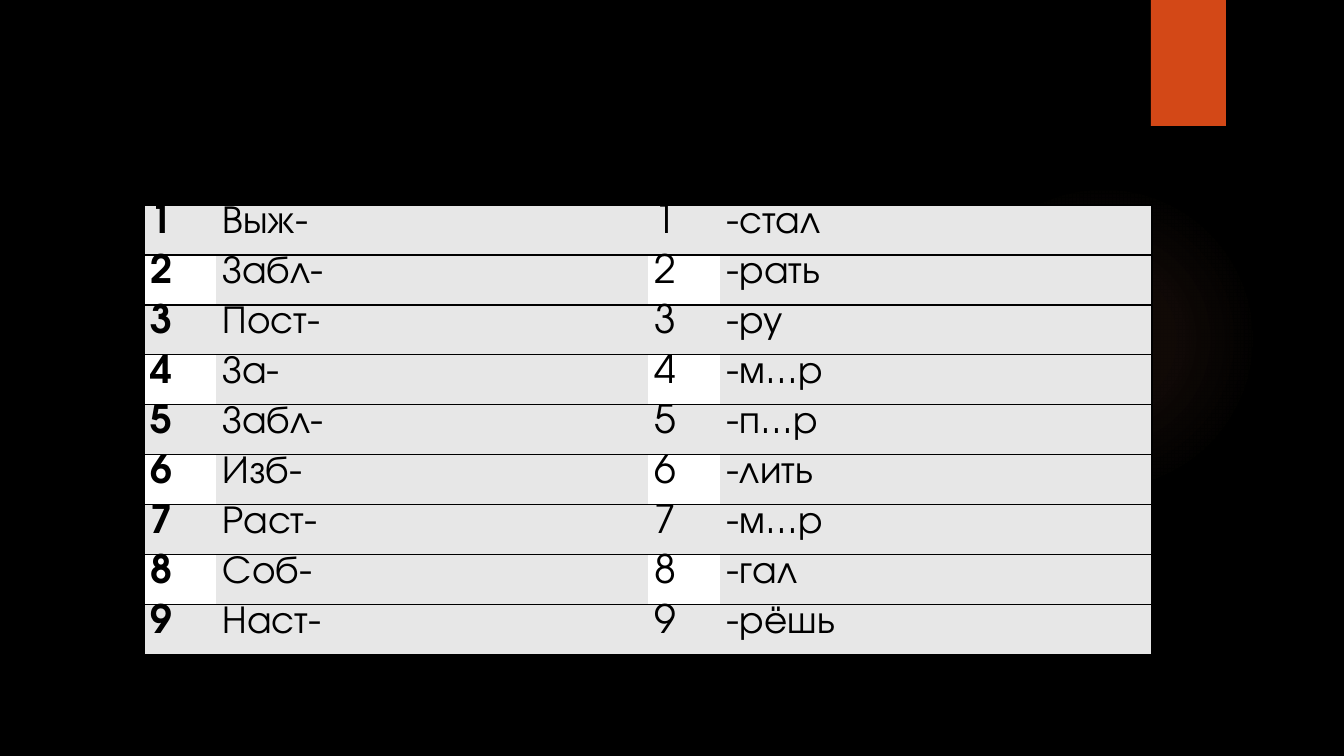
from dataclasses import dataclass

from pptx import Presentation
from pptx.dml.color import RGBColor
from pptx.enum.shapes import MSO_SHAPE as Preset
from pptx.oxml import parse_xml
from pptx.oxml.ns import nsdecls
from pptx.slide import Slide
from pptx.table import Table, _Cell as Cell
from pptx.util import Emu, Pt

EMU_PER_PX = 914400 / 100.8
FONT = "TeX Gyre Adventor"
BLACK, WHITE, GREY = "000000", "FFFFFF", "E7E7E7"
ORANGE, GLOW = "D34817", "EF8C6A"
GLOW_STOPS = ((0, 7), (36, 6), (69, 0))
COLUMN_WIDTHS = (72, 432, 72, 432)
ROW_HEIGHT = 50
CELL_MARGIN = 7


@dataclass(frozen=True)
class WordPair:
    """The two halves on one row of the table."""
    beginning: str
    ending: str


WORD_PAIRS = (
    WordPair("Выж-", "-стал"),
    WordPair("Забл-", "-рать"),
    WordPair("Пост-", "-ру"),
    WordPair("За-", "-м...р"),
    WordPair("Забл-", "-п...р"),
    WordPair("Изб-", "-лить"),
    WordPair("Раст-", "-м...р"),
    WordPair("Соб-", "-гал"),
    WordPair("Наст-", "-рёшь"),
)


def px(length: int) -> Emu:
    """Turn pixels into EMU."""
    return Emu(round(length * EMU_PER_PX))


def color(value: str) -> RGBColor:
    """Turn a hex string into a colour."""
    return RGBColor.from_string(value)


def add_glow(slide: Slide) -> None:
    """Draw the faint round glow behind the table."""
    shape = slide.shapes.add_shape(Preset.OVAL, px(949), px(184), px(310), px(310))
    stops = "".join(
        f'<a:gs pos="{position * 1000}"><a:srgbClr val="{GLOW}">'
        f'<a:alpha val="{alpha * 1000}"/></a:srgbClr></a:gs>'
        for position, alpha in GLOW_STOPS
    )
    shape._element.spPr.append(parse_xml(
        f'<a:gradFill {nsdecls("a")}><a:gsLst>{stops}</a:gsLst><a:path path="circle">'
        '<a:fillToRect l="50000" t="50000" r="50000" b="50000"/></a:path></a:gradFill>'
    ))
    shape.line.fill.background()
    shape.shadow.inherit = False


def add_tab(slide: Slide) -> None:
    """Draw the orange tab at the top edge."""
    shape = slide.shapes.add_shape(Preset.RECTANGLE, px(1151), px(0), px(75), px(126))
    shape.fill.solid()
    shape.fill.fore_color.rgb = color(ORANGE)
    shape.line.fill.background()
    shape.shadow.inherit = False


def set_borders(cell: Cell, sides: str) -> None:
    """Give the named sides a thin black line and the others none."""
    properties = cell._tc.get_or_add_tcPr()
    for side in "LRTB":
        paint = (f'<a:solidFill><a:srgbClr val="{BLACK}"/></a:solidFill>'
                 if side in sides else "<a:noFill/>")
        properties.append(parse_xml(
            f'<a:ln{side} {nsdecls("a")} w="{Pt(1)}">{paint}</a:ln{side}>'))


def fill_cell(cell: Cell, text: str, fill: str, bold: bool, sides: str) -> None:
    """Write and style one table cell."""
    cell.margin_left = cell.margin_right = px(CELL_MARGIN)
    cell.margin_top = cell.margin_bottom = 0
    set_borders(cell, sides)
    cell.fill.solid()
    cell.fill.fore_color.rgb = color(fill)
    run = cell.text_frame.paragraphs[0].add_run()
    run.text = text
    run.font.name = FONT
    run.font.size = Pt(28)
    run.font.bold = bold
    run.font.color.rgb = color(BLACK)


def add_word_table(slide: Slide) -> Table:
    """Draw the numbered table of word halves."""
    table = slide.shapes.add_table(
        len(WORD_PAIRS), len(COLUMN_WIDTHS), px(144), px(205),
        px(sum(COLUMN_WIDTHS)), px(ROW_HEIGHT * len(WORD_PAIRS))).table
    table.first_row = table.horz_banding = False
    for column, width in zip(table.columns, COLUMN_WIDTHS):
        column.width = px(width)
    outer_sides = {0: "L", len(COLUMN_WIDTHS) - 1: "R"}
    for row_index, pair in enumerate(WORD_PAIRS):
        table.rows[row_index].height = px(ROW_HEIGHT)
        number = str(row_index + 1)
        number_fill = WHITE if row_index % 2 else GREY
        for column_index, text in enumerate((number, pair.beginning, number, pair.ending)):
            fill_cell(
                table.cell(row_index, column_index), text,
                GREY if column_index % 2 else number_fill,
                column_index == 0, "TB" + outer_sides.get(column_index, ""))
    return table


def main() -> None:
    """Build and save the presentation."""
    presentation = Presentation()
    presentation.slide_width, presentation.slide_height = px(1344), px(756)
    slide = presentation.slides.add_slide(presentation.slide_layouts[6])
    slide.background.fill.solid()
    slide.background.fill.fore_color.rgb = color(BLACK)
    add_glow(slide)
    add_tab(slide)
    add_word_table(slide)
    presentation.save("out.pptx")


if __name__ == "__main__":
    main()
